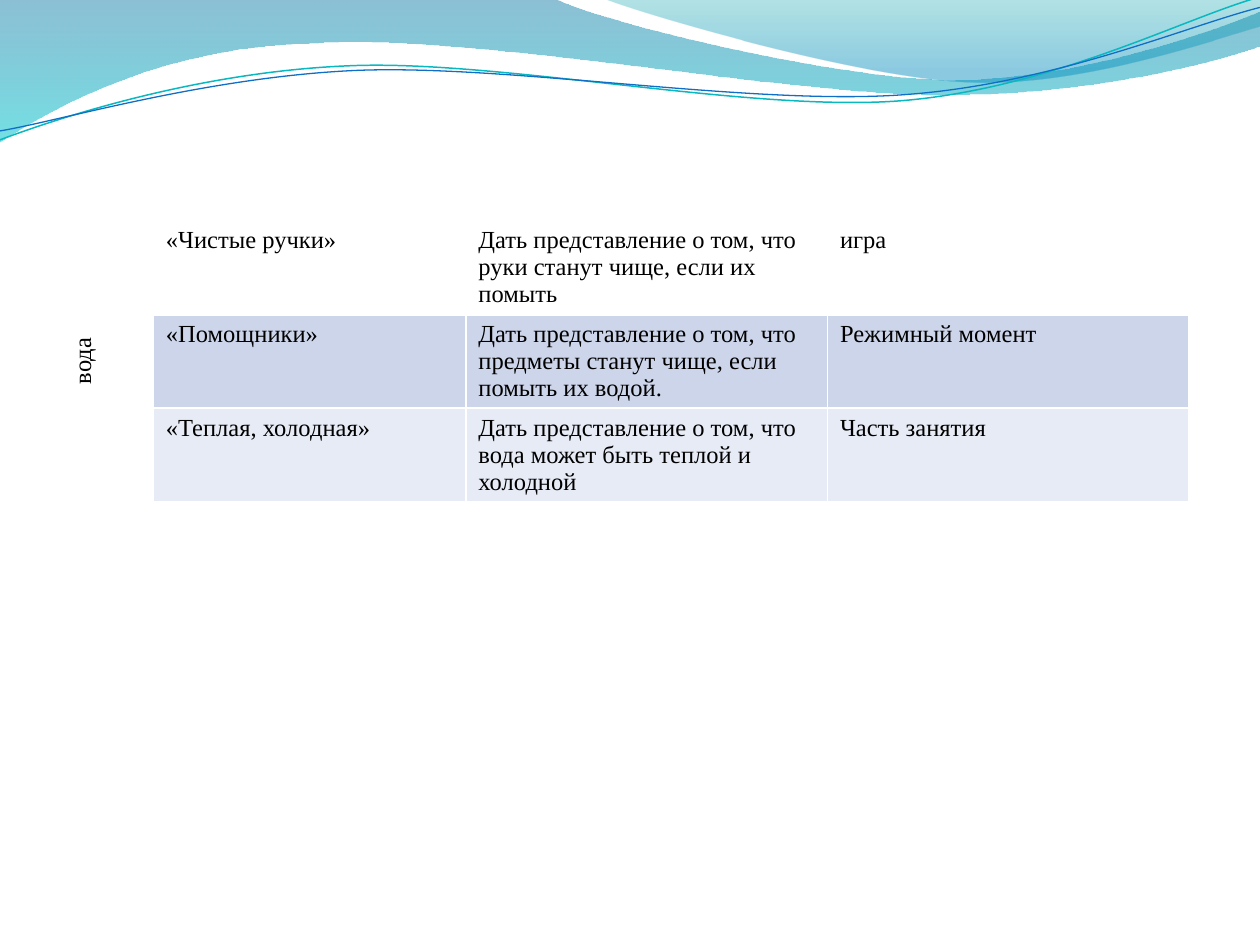
from lxml import etree
from pptx import Presentation
from pptx.dml.color import RGBColor
from pptx.enum import text
from pptx.oxml.ns import qn
from pptx.util import Cm, Pt

WHITE = RGBColor(0xFF, 0xFF, 0xFF)
BLACK = RGBColor(0, 0, 0)
DEEP_BLUE = RGBColor(0x00, 0x74, 0xA1)
AQUA = RGBColor(0x00, 0xC6, 0xCF)
TEAL = RGBColor(0x00, 0xA1, 0xA9)
SKY = RGBColor(0x00, 0x8B, 0xBF)
TEAL_LINE = RGBColor(0x0A, 0xB8, 0xBF)
BLUE_LINE = RGBColor(0x0F, 0x6F, 0xC6)
ROW_FILLS = [WHITE, RGBColor(0xCC, 0xD5, 0xEA), RGBColor(0xE7, 0xEB, 0xF5)]


def draw_wave(shapes, start, segments, close):
    """Draw a path in cm: a pair is a straight line, six numbers a Bezier curve."""
    points = [(Cm(s[i]), Cm(s[i + 1])) for s in segments for i in range(0, len(s), 2)]
    builder = shapes.build_freeform(Cm(start[0]), Cm(start[1]))
    builder.add_line_segments(points, close=close)
    wave = builder.convert_to_shape()
    wave.shadow.inherit = False
    # Join the three straight steps of each curve into one Bezier segment
    steps = iter(wave._element.findall(".//" + qn("a:lnTo")))
    for segment in segments:
        first = next(steps)
        if len(segment) == 6:
            first.tag = qn("a:cubicBezTo")
            for step in (next(steps), next(steps)):
                first.append(step[0])
                step.getparent().remove(step)
    return wave


def add_border(cell, side, width):
    """Put a white border on one side (L, R, T or B), ahead of the cell's fill."""
    props = cell._tc.get_or_add_tcPr()
    line = etree.Element(qn(f"a:ln{side}"), w=str(Pt(width)))
    solid = etree.SubElement(line, qn("a:solidFill"))
    etree.SubElement(solid, qn("a:srgbClr"), val=str(WHITE))
    props.insert("LRTB".index(side), line)


prs = Presentation()
prs.slide_width, prs.slide_height = Cm(25.4), Cm(19.05)
slide = prs.slides.add_slide(prs.slide_layouts[6])

# Translucent bands: start, segments, gradient stops (position, colour, opacity %)
bands = [
    ((0, 0),
     [(11.18, -0.03), (12.09, 0.43, 16.87, 1.6, 19.25, 1.6),
      (21.67, 1.6, 24.33, 0.66, 25.4, 0.23), (25.43, 0.91),
      (24.97, 1.12, 22.1, 1.93, 18.95, 1.91), (15.8, 1.91, 9.7, 0.71, 6.53, 0.86),
      (3.28, 0.91, 1.17, 2.11, -0.03, 2.87), (0, 0)],
     [(0, DEEP_BLUE, 45), (1, AQUA, 55)]),
    ((12.17, -0.03),
     [(12.93, 0.28, 17.32, 1.57, 19.53, 1.65), (21.74, 1.75, 24.41, 0.81, 25.4, 0.53),
      (25.4, 0), (12.17, -0.03)],
     [(0, TEAL, 30), (0.8, SKY, 45)]),
]
for start, segments, stops in bands:
    band = draw_wave(slide.shapes, start, segments, close=True)
    band.line.fill.background()
    band.fill.gradient()
    band.fill.gradient_angle = 270
    for stop, (position, color, _) in zip(band.fill.gradient_stops, stops):
        stop.position = position
        stop.color.rgb = color
    colors = band._element.spPr.findall(".//" + qn("a:srgbClr"))
    for color, (_, _, opacity) in zip(colors, stops):
        etree.SubElement(color, qn("a:alpha"), val=str(opacity * 1000))

# Thin wave lines, tilted together
wave_lines = [
    ((-0.05, 2.22),
     [(1.19, 1.82, 4.02, 1.04, 7.05, 1.06), (10.05, 1.07, 15.02, 2.37, 18.08, 2.29),
      (21.13, 2.2, 23.87, 0.91, 25.41, 0.55)],
     TEAL_LINE, 0.85),
    ((-0.04, 2.04),
     [(1.16, 1.9, 4.18, 1.15, 7.2, 1.16), (10.25, 1.18, 15.13, 2.25, 18.18, 2.17),
      (21.21, 2.1, 23.93, 1.06, 25.45, 0.75)],
     BLUE_LINE, 0.75),
]
wave_group = slide.shapes.add_group_shape()
for start, segments, color, width in wave_lines:
    wave = draw_wave(wave_group.shapes, start, segments, close=False)
    wave.rotation = 357.3
    wave.fill.background()
    wave.line.color.rgb = color
    wave.line.width = Pt(width)

# Table of activities with water
topic = "вода"
activities = [
    ("«Чистые ручки»", "Дать представление о том, что руки станут чище, если их помыть", "игра"),
    ("«Помощники»", "Дать представление о том, что предметы станут чище, если помыть их водой.",
     "Режимный момент"),
    ("«Теплая, холодная»", "Дать представление о том, что вода может быть теплой и холодной",
     "Часть занятия"),
]
column_widths = [1.82, 6.3, 7.29, 7.29]
row_height = 1.45
font_format = {"name": "Times New Roman", "size": Pt(14), "bold": False}

table_frame = slide.shapes.add_table(
    len(activities), len(column_widths), Cm(1.27), Cm(4.44),
    Cm(sum(column_widths)), Cm(row_height * len(activities)))
table = table_frame.table
for column, width in zip(table.columns, column_widths):
    column.width = Cm(width)

for row, activity in enumerate(activities):
    table.rows[row].height = Cm(row_height)
    for col, words in enumerate((topic if row == 0 else "", *activity)):
        cell = table.cell(row, col)
        cell.fill.solid()
        cell.fill.fore_color.rgb = WHITE if col == 0 else ROW_FILLS[row]
        for side in "LRTB":
            thick = (row, side) in ((0, "B"), (1, "T"))
            add_border(cell, side, 3 if thick else 1)
        if words:
            run = cell.text_frame.paragraphs[0].add_run()
            run.text = words
            for name, value in font_format.items():
                setattr(run.font, name, value)
            run.font.color.rgb = BLACK
table_frame.height = Cm(6.1)

topic_cell = table.cell(0, 0)
topic_cell.merge(table.cell(len(activities) - 1, 0))
topic_cell._tc.get_or_add_tcPr().set("vert", "vert270")
topic_cell.text_frame.paragraphs[0].alignment = text.PP_ALIGN.CENTER

prs.save("out.pptx")
